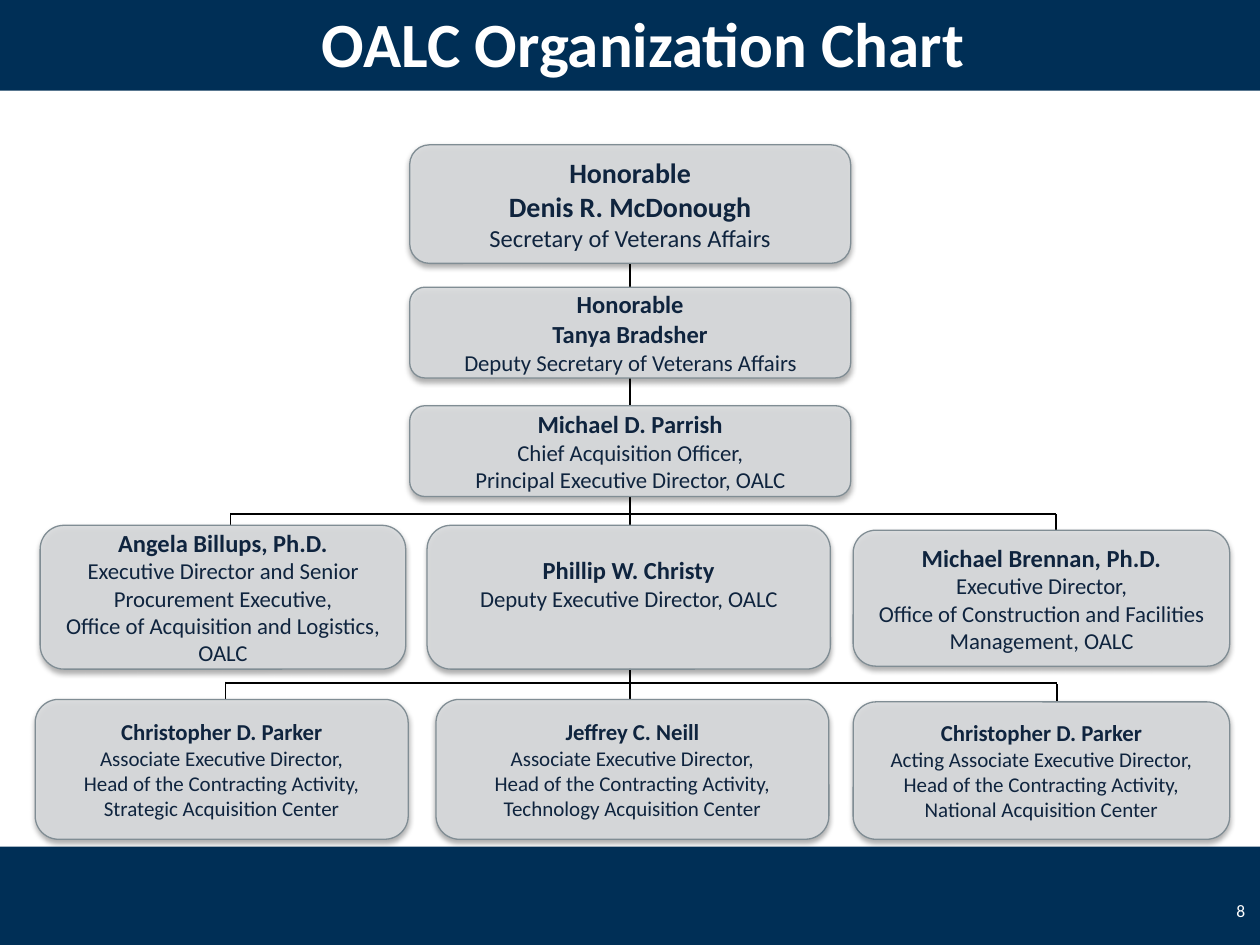
from dataclasses import dataclass

from lxml import etree
from pptx import Presentation
from pptx import util as u
from pptx.dml.color import RGBColor
from pptx.enum import shapes, text
from pptx.oxml import ns


@dataclass(frozen=True)
class Theme:
    font: str = "Calibri"
    navy: str = "002F56"
    card: str = "D9DBDD"
    edge: str = "808D94"
    ink: str = "0F243E"
    line: str = "000000"
    white: str = "FFFFFF"
    head: int = 36
    page: int = 10


@dataclass(frozen=True)
class Card:
    left: float
    top: float
    width: float
    height: float
    names: list[str]
    roles: list[str]
    large: int = 14
    small: int = 13
    lift: float = 0


@dataclass(frozen=True)
class Link:
    x1: float
    y1: float
    x2: float
    y2: float
    weight: float = 1


THEME = Theme()
MID = 12.7
WIDE, TALL = 25.4, 19.05
INSET = 0.2
HEAD = "Head of the Contracting Activity,"
AIDE = "Associate Executive Director,"

CARDS = [
    Card(8.26, 2.92, 8.89, 2.39, ["Honorable", "Denis R. McDonough"],
         ["Secretary of Veterans Affairs"], 16, 14),
    Card(8.26, 5.79, 8.89, 1.83, ["Honorable", "Tanya Bradsher"],
         ["Deputy Secretary of Veterans Affairs"]),
    Card(8.26, 8.18, 8.89, 1.83, ["Michael D. Parrish"],
         ["Chief Acquisition Officer,", "Principal Executive Director, OALC"]),
    Card(0.81, 10.59, 7.37, 2.9, ["Angela Billups, Ph.D."],
         ["Executive Director and Senior Procurement Executive,",
          "Office of Acquisition and Logistics, OALC"]),
    Card(8.61, 10.59, 8.13, 2.9, ["Phillip W. Christy"],
         ["Deputy Executive Director, OALC"], lift=0.56),
    Card(17.2, 10.69, 7.59, 2.74, ["Michael Brennan, Ph.D."],
         ["Executive Director,",
          "Office of Construction and Facilities Management, OALC"]),
    Card(0.71, 14.1, 7.52, 2.82, ["Christopher D. Parker"],
         [AIDE, HEAD + " Strategic Acquisition Center"], 13, 12),
    Card(8.79, 14.1, 7.92, 2.82, ["Jeffrey C. Neill"],
         [AIDE, HEAD, "Technology Acquisition Center"], 13, 12),
    Card(17.2, 14.15, 7.59, 2.77, ["Christopher D. Parker"],
         ["Acting " + AIDE, HEAD, "National Acquisition Center"], 13, 12),
]

LINKS = [
    Link(MID, 5.31, MID, 5.79),
    Link(MID, 7.62, MID, 8.18),
    Link(MID, 10.01, MID, 10.59),
    Link(4.65, 10.36, 21.29, 10.36),
    Link(4.65, 10.34, 4.65, 10.59, 0.75),
    Link(21.29, 10.36, 21.29, 10.69, 0.75),
    Link(MID, 13.46, MID, 14.1),
    Link(4.55, 13.77, 21.31, 13.77),
    Link(4.55, 13.74, 4.55, 14.1, 0.75),
    Link(21.31, 13.79, 21.31, 14.15, 0.75),
]


def tint(code: str) -> RGBColor:
    return RGBColor.from_string(code)


def style(para, size: int, code: str, bold: bool, align) -> None:
    para.alignment = align
    font = para.font
    font.name, font.size, font.bold = THEME.font, u.Pt(size), bold
    font.color.rgb = tint(code)


def fade(node, share: int) -> None:
    etree.SubElement(node, ns.qn("a:alpha")).set("val", str(share * 1000))


def shade(shape) -> None:
    shape.shadow.inherit = False
    list_ = shape._element.spPr.find(ns.qn("a:effectLst"))
    glow = etree.SubElement(list_, ns.qn("a:outerShdw"), blurRad=str(u.Pt(3.1)),
                            dist=str(u.Pt(1.8)), dir="5400000", rotWithShape="0")
    fade(etree.SubElement(glow, ns.qn("a:srgbClr"), val=THEME.line), 35)


def draw_bar(slide, top: float, height: float) -> None:
    bar = slide.shapes.add_shape(shapes.MSO_SHAPE.RECTANGLE, 0, u.Cm(top),
                                 u.Cm(WIDE), u.Cm(height))
    bar.shadow.inherit = False
    bar.fill.solid()
    bar.fill.fore_color.rgb = tint(THEME.navy)
    bar.line.fill.background()


def draw_link(slide, link: Link) -> None:
    ends = map(u.Cm, (link.x1, link.y1, link.x2, link.y2))
    line = slide.shapes.add_connector(shapes.MSO_CONNECTOR.STRAIGHT, *ends)
    line.line.color.rgb = tint(THEME.line)
    line.line.width = u.Pt(link.weight)
    etree.SubElement(line._element.spPr, ns.qn("a:effectLst"))


def draw_card(slide, card: Card) -> None:
    area = map(u.Cm, (card.left, card.top, card.width, card.height))
    box = slide.shapes.add_shape(shapes.MSO_SHAPE.ROUNDED_RECTANGLE, *area)
    box.fill.solid()
    box.fill.fore_color.rgb = tint(THEME.card)
    fade(box._element.spPr.find(".//" + ns.qn("a:srgbClr")), 90)
    box.line.color.rgb = tint(THEME.edge)
    box.line.width = u.Pt(0.75)
    shade(box)
    frame = box.text_frame
    frame.word_wrap = True
    frame.vertical_anchor = text.MSO_ANCHOR.MIDDLE
    frame.margin_left = frame.margin_right = frame.margin_top = u.Cm(INSET)
    frame.margin_bottom = u.Cm(INSET + card.lift)
    frame.text = "\n".join(card.names + card.roles)
    for i, para in enumerate(frame.paragraphs):
        bold = i < len(card.names)
        style(para, card.large if bold else card.small, THEME.ink, bold,
              text.PP_ALIGN.CENTER)


def draw_title(slide, words: str) -> None:
    title = slide.shapes.title
    title.left, title.top = u.Cm(0.76), u.Cm(0.13)
    title.width, title.height = u.Cm(24.41), u.Cm(1.45)
    frame = title.text_frame
    frame.text = words
    frame.auto_size = text.MSO_AUTO_SIZE.NONE
    frame.vertical_anchor = text.MSO_ANCHOR.MIDDLE
    style(frame.paragraphs[0], THEME.head, THEME.white, True, text.PP_ALIGN.CENTER)


def draw_page(slide, words: str) -> None:
    box = slide.shapes.add_textbox(u.Cm(24.31), u.Cm(18.11), u.Cm(0.79), u.Cm(0.48))
    frame = box.text_frame
    frame.word_wrap = True
    frame.vertical_anchor = text.MSO_ANCHOR.MIDDLE
    frame.margin_left = frame.margin_right = 0
    frame.margin_top = frame.margin_bottom = 0
    frame.text = words
    style(frame.paragraphs[0], THEME.page, THEME.white, False, text.PP_ALIGN.RIGHT)


def main() -> None:
    deck = Presentation()
    deck.slide_width, deck.slide_height = u.Cm(WIDE), u.Cm(TALL)
    slide = deck.slides.add_slide(deck.slide_layouts[5])
    draw_bar(slide, 17.07, TALL - 17.07)
    draw_bar(slide, 0, 1.83)
    title = slide.shapes.title._element
    title.getparent().append(title)
    draw_title(slide, "OALC Organization Chart")
    for link in LINKS:
        draw_link(slide, link)
    for card in CARDS:
        draw_card(slide, card)
    draw_page(slide, "8")
    deck.save("out.pptx")


if __name__ == "__main__":
    main()
